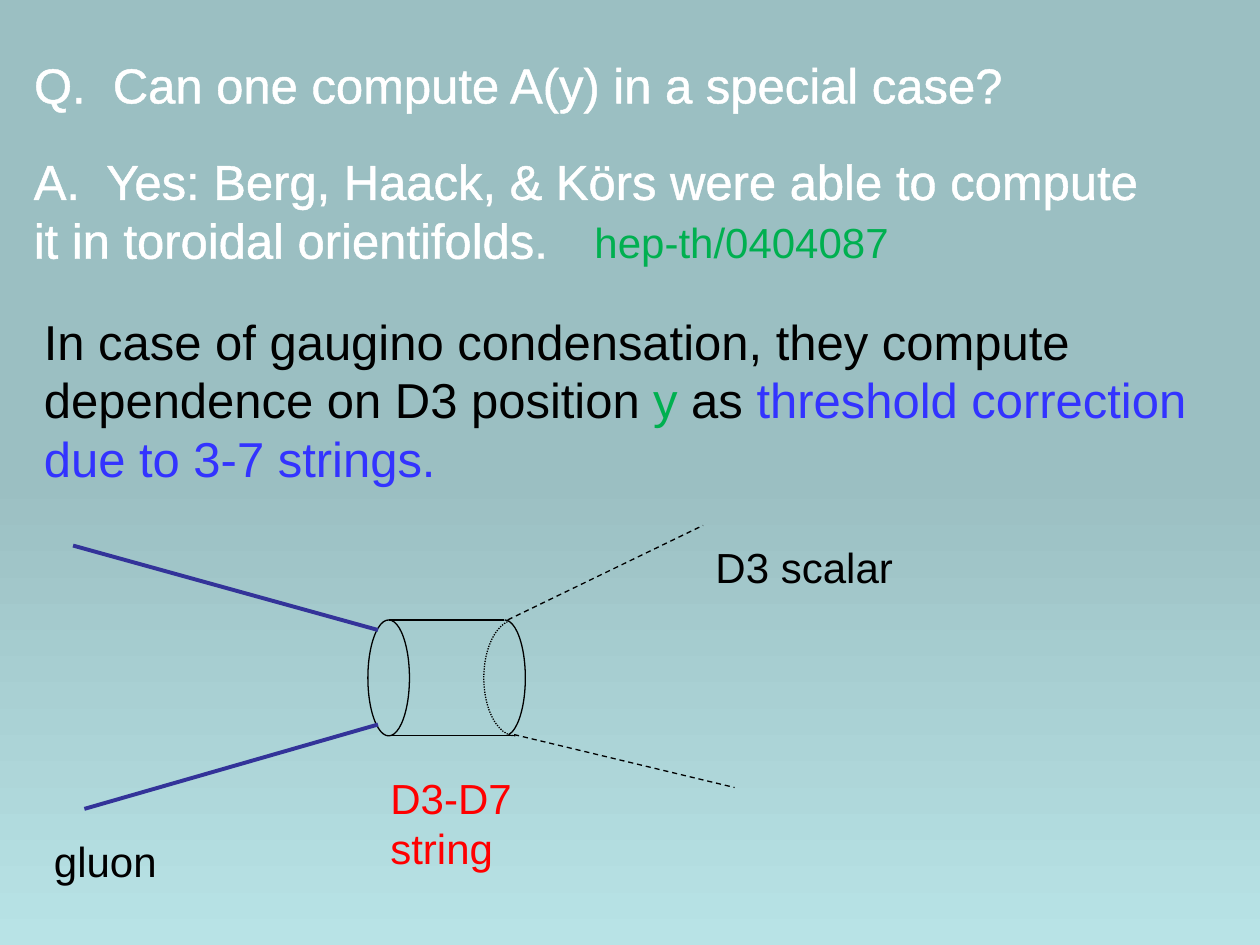
import lxml.etree
import pptx
import pptx.dml.color
import pptx.enum.dml
import pptx.enum.shapes
import pptx.enum.text
import pptx.oxml.ns
import pptx.util

Inches = pptx.util.Inches
Pt = pptx.util.Pt
SHAPES = pptx.enum.shapes.MSO_SHAPE
DASHES = pptx.enum.dml.MSO_LINE
MIDDLE = pptx.enum.text.MSO_ANCHOR.MIDDLE
LEFT = pptx.enum.text.PP_ALIGN.LEFT

WHITE, BLACK, GREEN = "FFFFFF", "000000", "00B050"
BLUE, RED, GLUON_BLUE = "3333FF", "FF0000", "333399"


def color(value):
    """Return the colour for a hex string."""
    return pptx.dml.color.RGBColor.from_string(value)


def set_values(target, values):
    """Set each attribute named in a dict."""
    for name, value in values.items():
        setattr(target, name, value)


def add_child(parent, tag, position=None, **attributes):
    """Add a DrawingML element to a parent and return it."""
    child = lxml.etree.Element(pptx.oxml.ns.qn(tag), attributes)
    parent.insert(len(parent) if position is None else position, child)
    return child


def outline_run(run, value):
    """Draw an outline around the letters of a run."""
    line = add_child(run.font._element, "a:ln", 0, w=str(Pt(1.45)))
    fill = add_child(line, "a:solidFill")
    add_child(fill, "a:srgbClr", val=value)


def write_runs(paragraph, runs, size, outlined=False):
    """Write (text, colour) runs into a paragraph."""
    paragraph.alignment = LEFT
    written = []
    for text, value in runs:
        run = paragraph.add_run()
        run.text = text
        set_values(run.font, {"name": "Arial", "size": Pt(size), "bold": False})
        run.font.color.rgb = color(value)
        if outlined:
            outline_run(run, value)
        written.append(run)
    return written


def add_text_box(slide, box, wrap=True):
    """Add a text box and return its text frame."""
    frame = slide.shapes.add_textbox(*map(Inches, box)).text_frame
    frame.word_wrap = wrap
    return frame


def style_line(line, value, width, dash=None):
    """Set colour, width and dash of a line."""
    line.color.rgb = color(value)
    set_values(line, {"width": Pt(width), "dash_style": dash})


def add_line(slide, start, end, value=BLACK, width=0.75, dash=None):
    """Add a straight line between two points."""
    connector = slide.shapes.add_connector(
        pptx.enum.shapes.MSO_CONNECTOR.STRAIGHT, *map(Inches, (*start, *end)))
    style_line(connector.line, value, width, dash)
    add_child(connector._element.spPr, "a:effectLst")


def add_curve(slide, kind, box, angles=(), dash=None):
    """Add an unfilled ellipse, or an arc between two angles in degrees."""
    shape = slide.shapes.add_shape(kind, *map(Inches, box))
    shape.shadow.inherit = False
    shape.fill.background()
    style_line(shape.line, BLACK, 0.75, dash)
    for index, angle in enumerate(angles):
        shape.adjustments[index] = angle * 0.6


def fill_background(slide):
    """Fill the background with a vertical gradient."""
    fill = slide.background.fill
    fill.gradient()
    fill.gradient_angle = 270
    stops = ((0.5, "9BBFC2"), (1, "B8E3E6"))
    for stop, (position, value) in zip(fill.gradient_stops, stops):
        stop.position = position
        stop.color.rgb = color(value)


def add_question(slide, box):
    """Place the question in the title placeholder."""
    title = slide.shapes.title
    set_values(title, dict(zip(("left", "top", "width", "height"), map(Inches, box))))
    title.text_frame.vertical_anchor = MIDDLE
    runs = [("Q.  Can one compute A(y) in a special case?", WHITE)]
    write_runs(title.text_frame.paragraphs[0], runs, 28, True)


def add_answer(slide, box):
    """Place the answer, with its reference at a tab stop."""
    frame = add_text_box(slide, box)
    frame.vertical_anchor = MIDDLE
    paragraph = frame.paragraphs[0]
    answer = ("A.  Yes: Berg, Haack, & Körs were able to compute "
              "it in toroidal orientifolds.")
    write_runs(paragraph, [(answer, WHITE)], 28, True)
    write_runs(paragraph, [("\thep-th/0404087", GREEN)], 24)
    tabs = add_child(paragraph._p.get_or_add_pPr(), "a:tabLst")
    add_child(tabs, "a:tab", pos=str(Inches(4.45)), algn="l")


def add_explanation(slide, box):
    """Place the paragraph on gaugino condensation."""
    runs = [
        ("In case of gaugino condensation, they compute "
         "dependence on D3 position ", BLACK),
        ("y", GREEN),
        (" as ", BLACK),
        ("threshold correction due to 3-7 strings.", BLUE),
    ]
    write_runs(add_text_box(slide, box).paragraphs[0], runs, 28)


def add_cylinder(slide, box):
    """Draw the string worldsheet as an open cylinder."""
    left, top, width, height = box
    bottom = top + height
    cap = 0.33
    right_cap = left + width - cap
    add_curve(slide, SHAPES.OVAL, (left, top, cap, height))
    add_line(slide, (left + cap / 2, bottom), (left + 1.16, bottom))
    add_line(slide, (left + cap / 2, top), (left + 1.08, top))
    add_curve(slide, SHAPES.ARC, (right_cap, top, cap, height), (270, 86))
    add_curve(slide, SHAPES.ARC, (right_cap, top, 0.5, height), (90, 264),
              DASHES.ROUND_DOT)


def add_diagram(slide, box):
    """Draw the cylinder, its external legs and their labels."""
    left, top = box[:2]

    def at(x, y):
        return left + x, top + y

    add_cylinder(slide, (*at(2.59, 0.75), 1.25, 0.92))
    for start, end in (((3.7, 0.75), (5.25, 0)), ((3.75, 1.66), (5.5, 2.08))):
        add_line(slide, at(*start), at(*end), dash=DASHES.DASH)
    labels = (
        (("D3-D7", "string"), (2.67, 1.91), (1.26, 0.9), RED),
        (("D3 scalar",), (5.25, 0.08), (1.61, 0.5), BLACK),
        (("gluon",), (0, 2.41), (1.02, 0.5), BLACK),
    )
    for lines, corner, size, value in labels:
        frame = add_text_box(slide, (*at(*corner), *size), False)
        for index, text in enumerate(lines):
            paragraph = frame.add_paragraph() if index else frame.paragraphs[0]
            write_runs(paragraph, [(text, value)], 24)
    for start, end in (((2.67, 0.83), (0.25, 0.16)), ((2.67, 1.58), (0.34, 2.25))):
        add_line(slide, at(*start), at(*end), GLUON_BLUE, 2.25)


def main():
    """Build and save the slide."""
    presentation = pptx.Presentation()
    set_values(presentation, {"slide_width": Inches(10), "slide_height": Inches(7.5)})
    slide = presentation.slides.add_slide(presentation.slide_layouts[5])
    fill_background(slide)
    add_question(slide, (0.17, 0.33, 9.42, 0.67))
    add_answer(slide, (0.17, 1.33, 9.17, 0.67))
    add_explanation(slide, (0.25, 2.42, 9.5, 1.5))
    add_diagram(slide, (0.33, 4.17, 6.86, 2.91))
    presentation.save("out.pptx")


if __name__ == "__main__":
    main()
